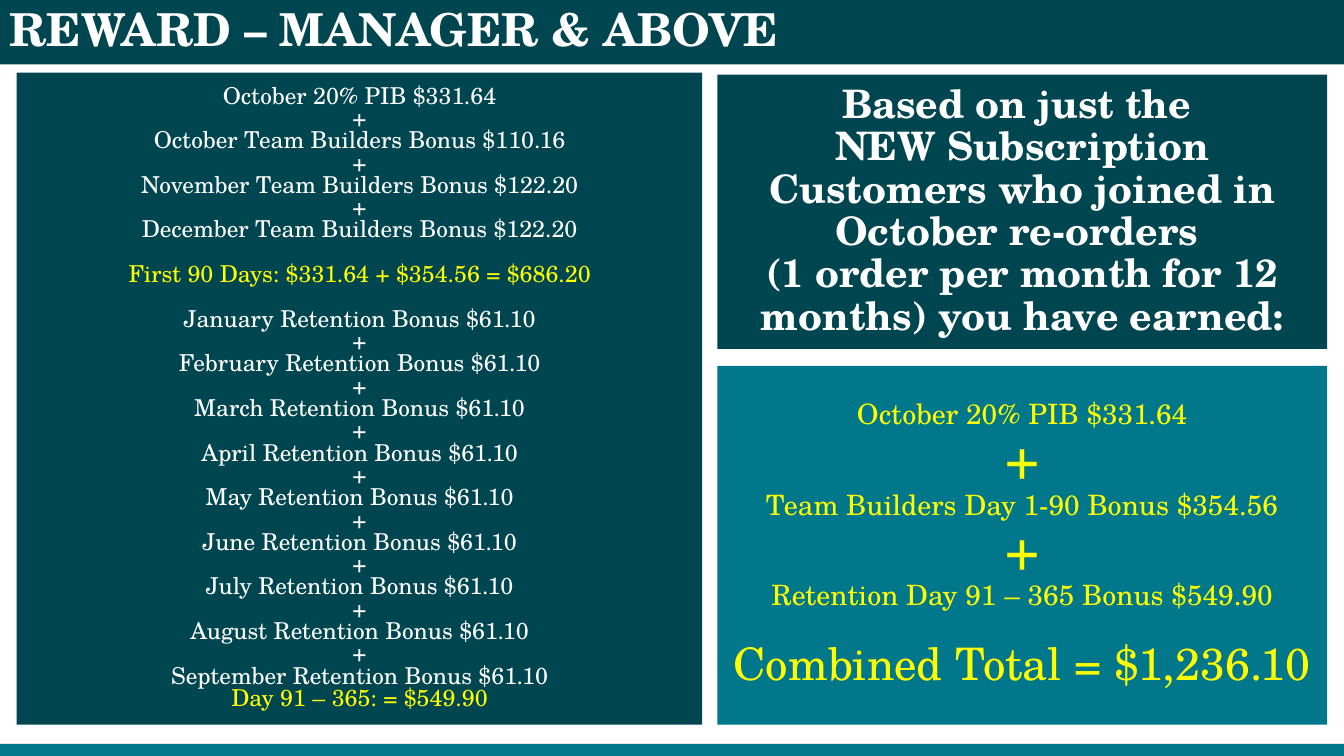
import pptx
import pptx.util
import pptx.dml.color
import pptx.enum.shapes
import pptx.enum.text
from dataclasses import dataclass

Pt = pptx.util.Pt
Align = pptx.enum.text.PP_ALIGN


@dataclass(frozen=True)
class Theme:
    dark: str = "004650"
    teal: str = "00778B"
    white: str = "FFFFFF"
    gold: str = "FFFF00"
    font: str = "TeX Gyre Schola"
    head: float = 32.4
    list: float = 16.6
    claim: float = 28
    item: float = 20
    plus: float = 40
    total: float = 32


THEME = Theme()
COLS, ROWS = 80, 45
UNIT = pptx.util.Inches(1 / 6)  # side of one grid square
RIGHT, SPAN = 42.7, 36.3  # right column: start and width


def color(code):
    return pptx.dml.color.RGBColor.from_string(code)


def panel(slide, col, row, wide, high, fill):
    """Add a plain filled box, placed on the grid."""
    box = slide.shapes.add_shape(
        pptx.enum.shapes.MSO_SHAPE.RECTANGLE,
        *(round(n * UNIT) for n in (col, row, wide, high)))
    box.shadow.inherit = False
    box.fill.solid()
    box.fill.fore_color.rgb = color(fill)
    box.line.fill.background()
    frame = box.text_frame
    frame.word_wrap = True
    frame.vertical_anchor = pptx.enum.text.MSO_ANCHOR.MIDDLE
    return frame


def write(frame, lines, space=0.9, align=Align.CENTER, bold=False):
    """Fill a box with lines of (text, size, colour, gap before)."""
    for i, (text, size, tint, gap) in enumerate(lines):
        para = frame.add_paragraph() if i else frame.paragraphs[0]
        para.text = text
        para.alignment = align
        para.line_spacing = space
        if gap:
            para.space_before = Pt(gap)
        font = para.font
        font.name, font.size, font.bold = THEME.font, Pt(size), bold
        font.color.rgb = color(tint)


def chain(items, size, plus, tint):
    """Put a plus line between each two items."""
    lines = []
    for text in items:
        if lines:
            lines.append(("+", plus, tint, 0))
        lines.append((text, size, tint, 0))
    return lines


def bonus_list():
    size, gap = THEME.list, 16
    team = [("October", "110.16"), ("November", "122.20"), ("December", "122.20")]
    months = ["January", "February", "March", "April", "May", "June",
              "July", "August", "September"]
    start = ["October 20% PIB $331.64"]
    start += [f"{month} Team Builders Bonus ${sum_}" for month, sum_ in team]
    keep = [f"{month} Retention Bonus $61.10" for month in months]
    later = chain(keep, size, size, THEME.white)
    later[0] = (*later[0][:3], gap)
    return [
        *chain(start, size, size, THEME.white),
        ("First 90 Days: $331.64 + $354.56 = $686.20", size, THEME.gold, gap),
        *later,
        ("Day 91 – 365: = $549.90", size, THEME.gold, 0),
    ]


def main():
    deck = pptx.Presentation()
    deck.slide_width, deck.slide_height = COLS * UNIT, ROWS * UNIT
    slide = deck.slides.add_slide(deck.slide_layouts[6])

    # Title band and foot band
    title = panel(slide, 0, 0, COLS, 3.84, THEME.dark)
    write(title, [("REWARD – MANAGER & ABOVE", THEME.head, THEME.white, 0)],
          align=Align.LEFT, bold=True)
    panel(slide, 0, 44.28, COLS, 0.72, THEME.teal)

    # Monthly bonuses
    write(panel(slide, 1, 4.32, 40.8, 38.82, THEME.dark), bonus_list(), space=0.8)

    # Claim
    claim = ["Based on just the ",
             "NEW Subscription Customers who joined in October re-orders ",
             "(1 order per month for 12 months) you have earned:"]
    write(panel(slide, RIGHT, 4.44, SPAN, 16.32, THEME.dark),
          [(text, THEME.claim, THEME.white, 0) for text in claim], bold=True)

    # Combined total
    parts = ["October 20% PIB $331.64",
             "Team Builders Day 1-90 Bonus $354.56",
             "Retention Day 91 – 365 Bonus $549.90"]
    total = ("Combined Total = $1,236.10", THEME.total, THEME.gold, 21.6)
    write(panel(slide, RIGHT, 21.78, SPAN, 21.36, THEME.teal),
          [*chain(parts, THEME.item, THEME.plus, THEME.gold), total])

    deck.save("out.pptx")


if __name__ == "__main__":
    main()
